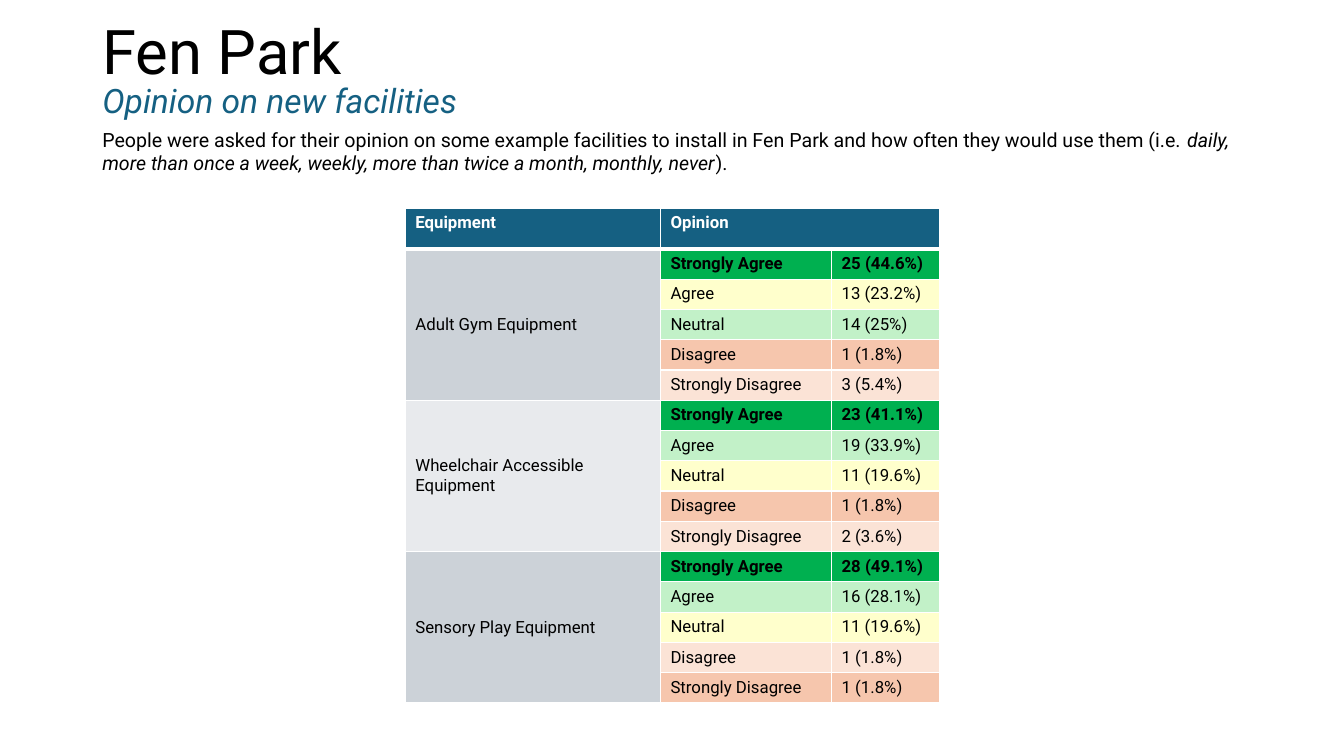
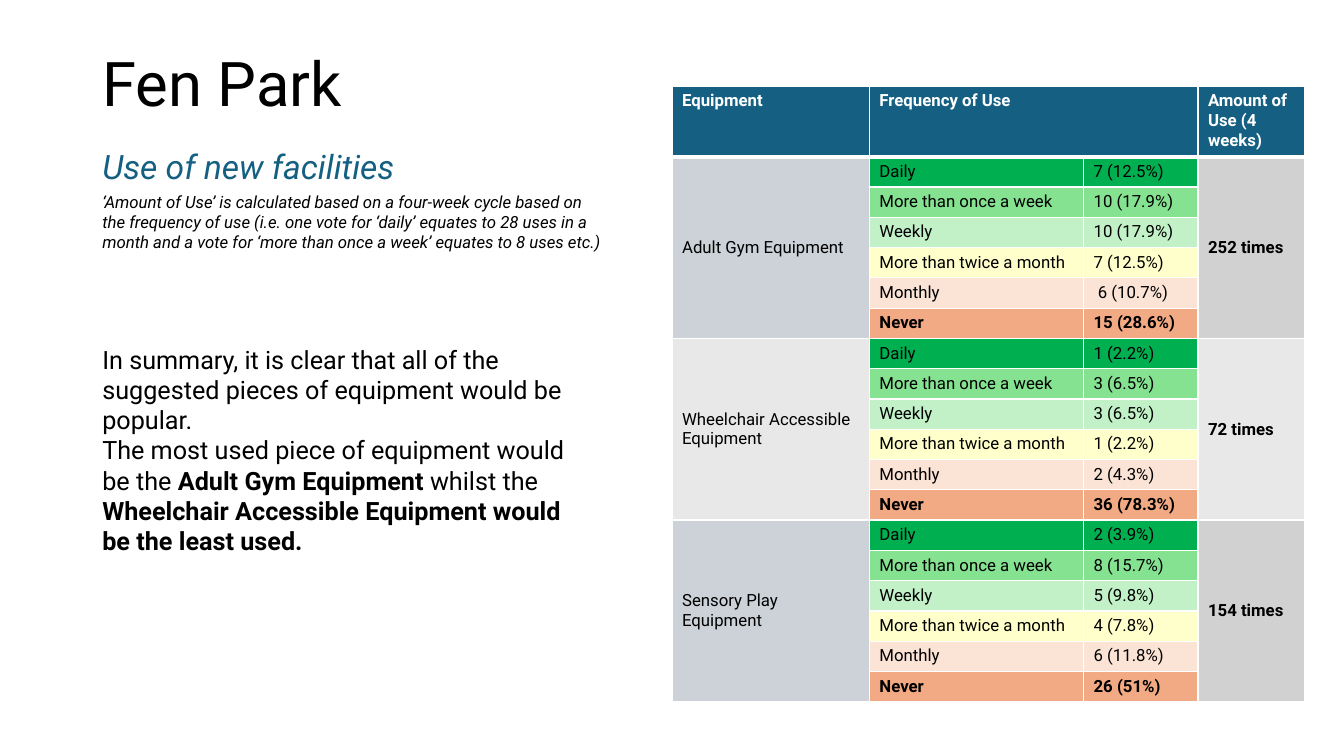
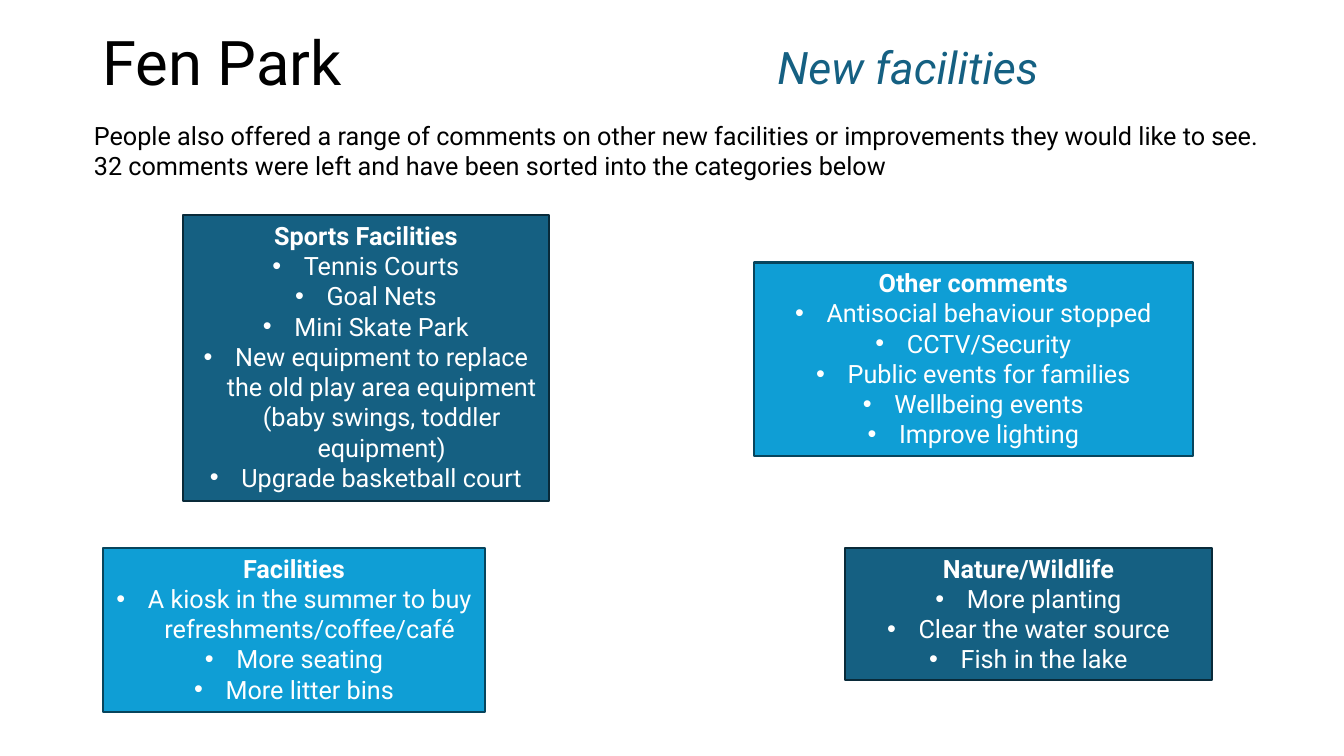
from lxml import etree
from pptx import Presentation
from pptx.dml.color import RGBColor
from pptx.enum.shapes import MSO_SHAPE
from pptx.enum.text import MSO_ANCHOR, MSO_AUTO_SIZE, PP_ALIGN
from pptx.oxml.ns import qn
from pptx.util import Pt

PX = 9525
FONT = "Roboto"
TITLE_ONLY = 5
LEFT, CENTER = PP_ALIGN.LEFT, PP_ALIGN.CENTER
TOP, MIDDLE = MSO_ANCHOR.TOP, MSO_ANCHOR.MIDDLE
MARGIN = 88
HEADER_SIZE = 12
ROW_H = 28
BULLET_INDENT = 30

COLORS = {
    "black": "000000",
    "white": "FFFFFF",
    "navy": "156082",
    "navy_line": "092A39",
    "sky": "0F9ED5",
    "sky_line": "07455D",
    "green": "00B050",
    "mid_green": "84E291",
    "pale_green": "C2F1C8",
    "yellow": "FFFFCC",
    "blush": "FBE3D6",
    "peach": "F6C6AD",
    "orange": "F2AA84",
    "slate": "CCD2D8",
    "mist": "E8EAED",
    "grey": "D1D1D1",
    "light_grey": "E8E8E8",
}

OPINIONS = ["Strongly Agree", "Agree", "Neutral", "Disagree", "Strongly Disagree"]
FREQUENCIES = ["Daily", "More than once a week", "Weekly",
               "More than twice a month", "Monthly", "Never"]
FREQUENCY_FILLS = ["green", "mid_green", "pale_green", "yellow", "blush", "orange"]
BOLD_ANSWERS = {"Strongly Agree", "Never"}

# Each group: equipment, its fill, answer fills, answer counts, then an optional total and its fill
OPINION_GROUPS = [
    ("Adult Gym Equipment", "slate",
     ["green", "yellow", "pale_green", "peach", "blush"],
     ["25 (44.6%)", "13 (23.2%)", "14 (25%)", "1 (1.8%)", "3 (5.4%)"]),
    ("Wheelchair Accessible Equipment", "mist",
     ["green", "pale_green", "yellow", "peach", "blush"],
     ["23 (41.1%)", "19 (33.9%)", "11 (19.6%)", "1 (1.8%)", "2 (3.6%)"]),
    ("Sensory Play Equipment", "slate",
     ["green", "pale_green", "yellow", "blush", "peach"],
     ["28 (49.1%)", "16 (28.1%)", "11 (19.6%)", "1 (1.8%)", "1 (1.8%)"]),
]
USE_GROUPS = [
    ("Adult Gym Equipment", "slate", FREQUENCY_FILLS,
     ["7 (12.5%)", "10 (17.9%)", "10 (17.9%)", "7 (12.5%)", " 6 (10.7%)", "15 (28.6%)"],
     "252 times", "grey"),
    ("Wheelchair Accessible Equipment", "light_grey", FREQUENCY_FILLS,
     ["1 (2.2%)", "3 (6.5%)", "3 (6.5%)", "1 (2.2%)", "2 (4.3%)", "36 (78.3%)"],
     "72 times", "light_grey"),
    ("Sensory Play Equipment", "slate", FREQUENCY_FILLS,
     ["2 (3.9%)", "8 (15.7%)", "5 (9.8%)", "4 (7.8%)", "6 (11.8%)", "26 (51%)"],
     "154 times", "grey"),
]

COMMENT_BOXES = [
    ((805, 522, 349, 126), "navy", "Nature/Wildlife",
     ["More planting", "Clear the water source", "Fish in the lake"]),
    ((98, 522, 364, 156), "sky", "Facilities",
     ["A kiosk in the summer to buy refreshments/coffee/café",
      "More seating", "More litter bins"]),
    ((718, 250, 418, 184), "sky", "Other comments",
     ["Antisocial behaviour stopped", "CCTV/Security",
      "Public events for families", "Wellbeing events", "Improve lighting"]),
    ((174, 205, 349, 272), "navy", "Sports Facilities",
     ["Tennis Courts", "Goal Nets", "Mini Skate Park",
      "New equipment to replace the old play area equipment "
      "(baby swings, toddler equipment)",
      "Upgrade basketball court"]),
]


def emu(*lengths):
    return [n * PX for n in lengths]


def rgb(name):
    return RGBColor.from_string(COLORS[name])


def set_font(font, size, color="black", bold=False, italic=None):
    font.name = FONT
    font.size = Pt(size)
    font.color.rgb = rgb(color)
    font.bold = bold
    font.italic = italic


def add_titled_slide(prs, top):
    slide = prs.slides.add_slide(prs.slide_layouts[TITLE_ONLY])
    sp = slide.shapes.title
    sp.left, sp.top, sp.width, sp.height = emu(MARGIN, top, 1104, 139)
    tf = sp.text_frame
    tf.text = "Fen Park"
    tf.auto_size = MSO_AUTO_SIZE.NONE
    tf.vertical_anchor = MIDDLE
    p = tf.paragraphs[0]
    p.alignment = LEFT
    p.line_spacing = 0.9
    set_font(p.font, 44)
    return slide


def add_text(slide, box, paragraphs, size, color="black", italic=None):
    """Add a text box; a paragraph is a list of (text, emphasis) runs, emphasis "", "b" or "i"."""
    tf = slide.shapes.add_textbox(*emu(*box)).text_frame
    tf.word_wrap = True
    tf.auto_size = MSO_AUTO_SIZE.SHAPE_TO_FIT_TEXT
    for i, runs in enumerate(paragraphs):
        p = tf.add_paragraph() if i else tf.paragraphs[0]
        set_font(p.font, size, color, italic=italic)
        for text, emphasis in runs:
            r = p.add_run()
            r.text = text
            if emphasis == "b":
                r.font.bold = True
            elif emphasis == "i":
                r.font.italic = True


def add_subtitle(slide, box, text, size=24):
    add_text(slide, box, [[(text, "")]], size, "navy", italic=True)


def set_cell(cell, text, fill, color="black", bold=False, anchor=TOP):
    cell.text = text
    cell.vertical_anchor = anchor
    cell.fill.solid()
    cell.fill.fore_color.rgb = rgb(fill)
    set_font(cell.text_frame.paragraphs[0].font, HEADER_SIZE, color, bold)


def set_borders(cell, bottom):
    """Draw white borders of 1 pt, with the bottom one of the given width."""
    tc_pr = cell._tc.get_or_add_tcPr()
    for i, (side, width) in enumerate([("L", 1), ("R", 1), ("T", 1), ("B", bottom)]):
        ln = etree.Element(qn(f"a:ln{side}"), w=str(Pt(width)))
        fill = etree.SubElement(ln, qn("a:solidFill"))
        etree.SubElement(fill, qn("a:srgbClr"), val=COLORS["white"])
        tc_pr.insert(i, ln)


def add_survey_table(slide, box, widths, header_h, headers, answers, groups):
    """Add a table with one merged block of answer rows for each piece of equipment."""
    n = len(answers)
    frame = slide.shapes.add_table(1 + n * len(groups), len(widths), *emu(*box))
    table = frame.table
    table.horz_banding = False
    for col, width in zip(table.columns, widths):
        col.width = width * PX
    for i, row in enumerate(table.rows):
        row.height = (ROW_H if i else header_h) * PX
    frame.height = box[3] * PX

    table.cell(0, 1).merge(table.cell(0, 2))
    for col, text in zip((0, 1, 3), headers):
        set_cell(table.cell(0, col), text, "navy", "white", True)

    for g, (equipment, equipment_fill, fills, counts, *total) in enumerate(groups):
        first = 1 + g * n
        set_cell(table.cell(first, 0), equipment, equipment_fill, anchor=MIDDLE)
        if total:
            set_cell(table.cell(first, 3), *total, bold=True, anchor=MIDDLE)
        for col in (0, 3) if total else (0,):
            table.cell(first, col).merge(table.cell(first + n - 1, col))
        for i, (answer, count, fill) in enumerate(zip(answers, counts, fills), first):
            for col, text in ((1, answer), (2, count)):
                set_cell(table.cell(i, col), text, fill, bold=answer in BOLD_ANSWERS)

    for i, row in enumerate(table.rows):
        for cell in row.cells:
            set_borders(cell, 1 if i else 3)


def add_bullet(p):
    p_pr = p._p.get_or_add_pPr()
    p_pr.set("marL", str(BULLET_INDENT * PX))
    p_pr.set("indent", str(-BULLET_INDENT * PX))
    bullet_font = etree.Element(qn("a:buFont"), typeface="Arial")
    bullet = etree.Element(qn("a:buChar"), char="•")
    p_pr.insert(0, bullet_font)
    p_pr.insert(1, bullet)


def add_comment_box(slide, box, color, heading, comments):
    sp = slide.shapes.add_shape(MSO_SHAPE.RECTANGLE, *emu(*box))
    sp.shadow.inherit = False
    sp.fill.solid()
    sp.fill.fore_color.rgb = rgb(color)
    sp.line.color.rgb = rgb(f"{color}_line")
    sp.line.width = Pt(1.5)
    tf = sp.text_frame
    tf.word_wrap = True
    tf.auto_size = MSO_AUTO_SIZE.SHAPE_TO_FIT_TEXT
    tf.vertical_anchor = TOP
    for i, text in enumerate([heading, *comments]):
        p = tf.add_paragraph() if i else tf.paragraphs[0]
        p.text = text
        p.alignment = CENTER
        set_font(p.font, 18, "white", bold=not i)
        if i:
            add_bullet(p)


def add_opinion_slide(prs):
    slide = add_titled_slide(prs, -18)
    add_subtitle(slide, (MARGIN, 71, 526, 48), "Opinion on new facilities")
    add_text(slide, (MARGIN, 117, 1136, 55), [[
        ("People were asked for their opinion on some example facilities to install "
         "in Fen Park and how often they would use them (i.e. ", ""),
        ("daily, more than once a week, weekly, more than twice a month, monthly, never", "i"),
        (").", ""),
    ]], 14)
    add_survey_table(slide, (386, 198, 509, 471), (243, 163, 103), 39,
                     ["Equipment", "Opinion"], OPINIONS, OPINION_GROUPS)


def add_use_slide(prs):
    slide = add_titled_slide(prs, 13)
    add_subtitle(slide, (MARGIN, 134, 526, 48), "Use of new facilities")
    add_text(slide, (MARGIN, 178, 501, 68), [[
        ("‘Amount of Use’ is calculated based on a four-week cycle based on the frequency "
         "of use (i.e. one vote for ‘daily’ equates to 28 uses in a month and a vote for "
         "‘more than once a week’ equates to 8 uses etc.)", ""),
    ]], 12, italic=True)
    add_survey_table(slide, (640, 82, 603, 586), (188, 204, 109, 102), 66,
                     ["Equipment", "Frequency of Use", "Amount of Use (4 weeks)"],
                     FREQUENCIES, USE_GROUPS)
    add_text(slide, (MARGIN, 323, 474, 213), [
        [("In summary, it is clear that all of the suggested pieces of equipment "
          "would be popular.", "")],
        [("The most used piece of equipment would be the ", ""),
         ("Adult Gym Equipment ", "b"),
         ("whilst the ", ""),
         ("Wheelchair Accessible Equipment would be the least used.", "b")],
    ], 18)


def add_comments_slide(prs):
    slide = add_titled_slide(prs, -7)
    add_subtitle(slide, (731, 33, 526, 61), "New facilities", 32)
    add_text(slide, (80, 110, 1156, 68), [[
        ("People also offered a range of comments on other new facilities or improvements "
         "they would like to see. 32 comments were left and have been sorted into the "
         "categories below", ""),
    ]], 18)
    for comment_box in COMMENT_BOXES:
        add_comment_box(slide, *comment_box)


def main():
    prs = Presentation()
    prs.slide_width, prs.slide_height = emu(1280, 720)
    add_opinion_slide(prs)
    add_use_slide(prs)
    add_comments_slide(prs)
    prs.save("out.pptx")


if __name__ == "__main__":
    main()
